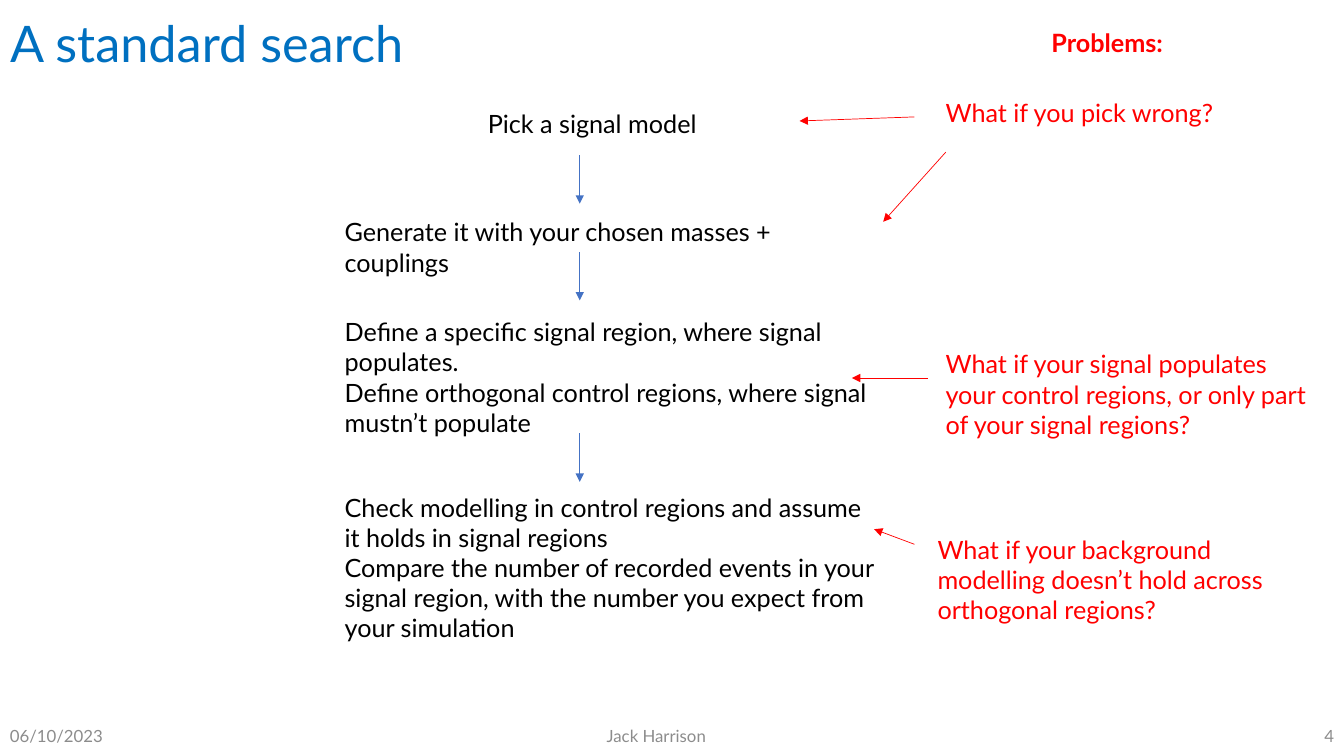
from pptx import Presentation
from pptx.dml.color import RGBColor
from pptx.enum.shapes import MSO_CONNECTOR
from pptx.enum.text import MSO_ANCHOR, MSO_AUTO_SIZE, PP_ALIGN
from pptx.oxml.ns import qn
from pptx.util import Inches, Pt
from lxml import etree

STRAIGHT = MSO_CONNECTOR.STRAIGHT
TOP, MIDDLE = MSO_ANCHOR.TOP, MSO_ANCHOR.MIDDLE
NO_FIT = MSO_AUTO_SIZE.NONE
LEFT, CENTER, RIGHT = PP_ALIGN.LEFT, PP_ALIGN.CENTER, PP_ALIGN.RIGHT

COLORS = {
    "title": "0070C0",
    "step": "000000",
    "problem": "FF0000",
    "flow": "4472C4",
    "footer": "8C8C8C",
}
FONT = "Lato"
TITLE_ONLY = 5

STEPS = [
    (4.74, 1.03, 2.66, 0.4, ["Pick a signal model"]),
    (3.32, 2.1, 5.5, 0.4, ["Generate it with your chosen masses + couplings"]),
    (3.32, 3.09, 5.5, 1.31, [
        "Define a specific signal region, where signal populates.",
        "Define orthogonal control regions, where signal mustn’t populate",
    ]),
    (3.32, 4.83, 5.5, 1.62, [
        "Check modelling in control regions and assume it holds in signal regions",
        "Compare the number of recorded events in your signal region, "
        "with the number you expect from your simulation",
    ]),
]
FLOW_X, FLOW_LENGTH = 5.75, 0.48
FLOW_STARTS = [1.54, 2.5, 4.3]

PROBLEMS = [
    (9.28, 0.92, 0.4, "What if you pick wrong?"),
    (9.28, 3.41, 1.01, "What if your signal populates your control regions, "
                       "or only part of your signal regions?"),
    (9.2, 5.25, 1.01, "What if your background modelling doesn’t hold "
                      "across orthogonal regions?"),
]
PROBLEM_ARROWS = [
    (9.07, 1.16, 7.93, 1.2),
    (9.38, 1.51, 8.76, 2.2),
    (9.2, 3.75, 8.45, 3.75),
    (9.07, 5.4, 8.67, 5.25),
]
FOOTERS = [
    (0, 3, "06/10/2023", LEFT),
    (4.26, 4.5, "Jack Harrison", CENTER),
    (10.33, 3, "4", RIGHT),
]


def write_text(frame, lines, *, color, size=18, bold=False, align=LEFT,
               anchor=TOP, spacing=1.0):
    frame.word_wrap = True
    frame.auto_size = NO_FIT
    frame.vertical_anchor = anchor
    for index, line in enumerate(lines):
        para = frame.add_paragraph() if index else frame.paragraphs[0]
        para.alignment = align
        para.line_spacing = spacing
        span = para.add_run()
        span.text = line
        span.font.name = FONT
        span.font.size = Pt(size)
        span.font.bold = bold
        span.font.color.rgb = RGBColor.from_string(COLORS[color])


class SlideBuilder:
    def __init__(self, deck):
        self.page = deck.slides.add_slide(deck.slide_layouts[TITLE_ONLY])

    def title(self, text, left, top, width, height):
        box = self.page.shapes.title
        box.left, box.top = Inches(left), Inches(top)
        box.width, box.height = Inches(width), Inches(height)
        write_text(box.text_frame, [text], color="title", size=36,
                   anchor=MIDDLE, spacing=0.9)

    def text(self, left, top, width, height, lines, **style):
        box = self.page.shapes.add_textbox(
            Inches(left), Inches(top), Inches(width), Inches(height))
        write_text(box.text_frame, lines, **style)

    def arrow(self, x1, y1, x2, y2, color):
        arrow = self.page.shapes.add_connector(
            STRAIGHT, Inches(x1), Inches(y1), Inches(x2), Inches(y2))
        arrow.line.color.rgb = RGBColor.from_string(COLORS[color])
        arrow.line.width = Pt(0.5)
        properties = arrow.line._get_or_add_ln()
        etree.SubElement(properties, qn("a:tailEnd"), type="triangle")
        etree.SubElement(arrow._element.spPr, qn("a:effectLst"))


def main():
    deck = Presentation()
    deck.slide_width, deck.slide_height = Inches(13.33), Inches(7.5)
    slide = SlideBuilder(deck)

    slide.title("A standard search", 0, 0, 10.65, 0.92)
    for left, width, text, align in FOOTERS:
        slide.text(left, 7.1, width, 0.4, [text], color="footer", size=12,
                   align=align, anchor=MIDDLE)

    for left, top, width, height, lines in STEPS:
        slide.text(left, top, width, height, lines, color="step")
    for start in FLOW_STARTS:
        slide.arrow(FLOW_X, start, FLOW_X, start + FLOW_LENGTH, "flow")

    slide.text(10.33, 0.22, 1.83, 0.4, ["Problems:"], color="problem", bold=True)
    for left, top, height, text in PROBLEMS:
        slide.text(left, top, 3.88, height, [text], color="problem")
    for ends in PROBLEM_ARROWS:
        slide.arrow(*ends, "problem")

    deck.save("out.pptx")


if __name__ == "__main__":
    main()
